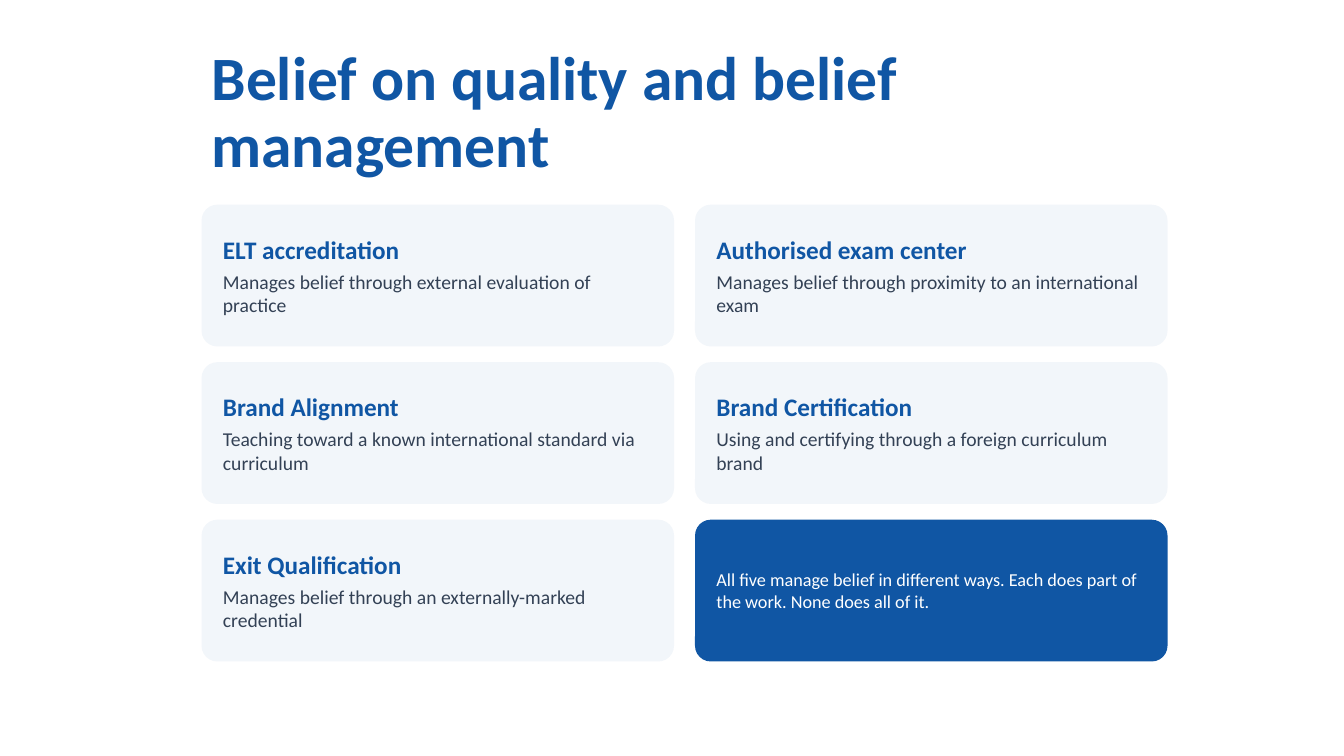
from lxml.etree import SubElement
from pptx import Presentation
from pptx.dml.color import RGBColor
from pptx.enum.shapes import MSO_SHAPE
from pptx.enum.text import MSO_ANCHOR, PP_ALIGN
from pptx.oxml.ns import qn
from pptx.util import Pt

PX = 9525  # EMU in one px, at 96 px to the inch
COLORS = {"blue": "1056A4", "slate": "334155", "white": "FFFFFF"}

TITLE = "Belief on quality and belief management"
CARDS = [
    ("ELT accreditation", "Manages belief through external evaluation of practice"),
    ("Authorised exam center", "Manages belief through proximity to an international exam"),
    ("Brand Alignment", "Teaching toward a known international standard via curriculum"),
    ("Brand Certification", "Using and certifying through a foreign curriculum brand"),
    ("Exit Qualification", "Manages belief through an externally-marked credential"),
]
CLOSING = "All five manage belief in different ways. Each does part of the work. None does all of it."

LEFT, TOP = 192, 195
WIDTH, HEIGHT = 450, 135
STEP_X, STEP_Y = 470, 150
RADIUS = 15
INSET = 16  # the rounded corners add about 4 px more


def rgb(name):
    return RGBColor.from_string(COLORS[name])


def box(left, top, width, height):
    return [n * PX for n in (left, top, width, height)]


def write(para, text, size, color, bold=False, before=None, line=None):
    run = para.add_run()
    run.text = text
    font = run.font
    font.name, font.size, font.bold = "Calibri", Pt(size), bold
    font.color.rgb = rgb(color)
    para.alignment = PP_ALIGN.LEFT
    if before is not None:
        para.space_before = Pt(before)
    if line is not None:
        para.line_spacing = line


def add_title(slide):
    frame = slide.shapes.add_textbox(*box(192, 38, 906, 141)).text_frame
    frame.word_wrap = True
    frame.vertical_anchor = MSO_ANCHOR.MIDDLE
    write(frame.paragraphs[0], TITLE, 44, "blue", bold=True, line=0.9)


def add_card(slide, index, alpha=100):
    """Add the card at this place of the two-column grid; return its text frame."""
    row, col = divmod(index, 2)
    place = box(LEFT + col * STEP_X, TOP + row * STEP_Y, WIDTH, HEIGHT)
    card = slide.shapes.add_shape(MSO_SHAPE.ROUNDED_RECTANGLE, *place)
    card.adjustments[0] = RADIUS / HEIGHT
    card.shadow.inherit = False
    card.line.fill.background()
    card.fill.solid()
    card.fill.fore_color.rgb = rgb("blue")
    if alpha < 100:
        tint = card.fill._xPr.find(qn("a:solidFill"))[0]
        SubElement(tint, qn("a:alpha")).set("val", str(alpha * 1000))
    frame = card.text_frame
    frame.word_wrap = True
    frame.vertical_anchor = MSO_ANCHOR.MIDDLE
    frame.margin_left = frame.margin_right = INSET * PX
    frame.margin_top = frame.margin_bottom = INSET * PX
    return frame


def main():
    deck = Presentation()
    deck.slide_width, deck.slide_height = 1280 * PX, 720 * PX
    slide = deck.slides.add_slide(deck.slide_layouts[6])
    add_title(slide)
    for index, (head, body) in enumerate(CARDS):
        frame = add_card(slide, index, alpha=5)
        write(frame.paragraphs[0], head, 18, "blue", bold=True)
        write(frame.add_paragraph(), body, 14, "slate", before=3.8)
    frame = add_card(slide, len(CARDS))
    write(frame.paragraphs[0], CLOSING, 13, "white")
    deck.save("out.pptx")


if __name__ == "__main__":
    main()
